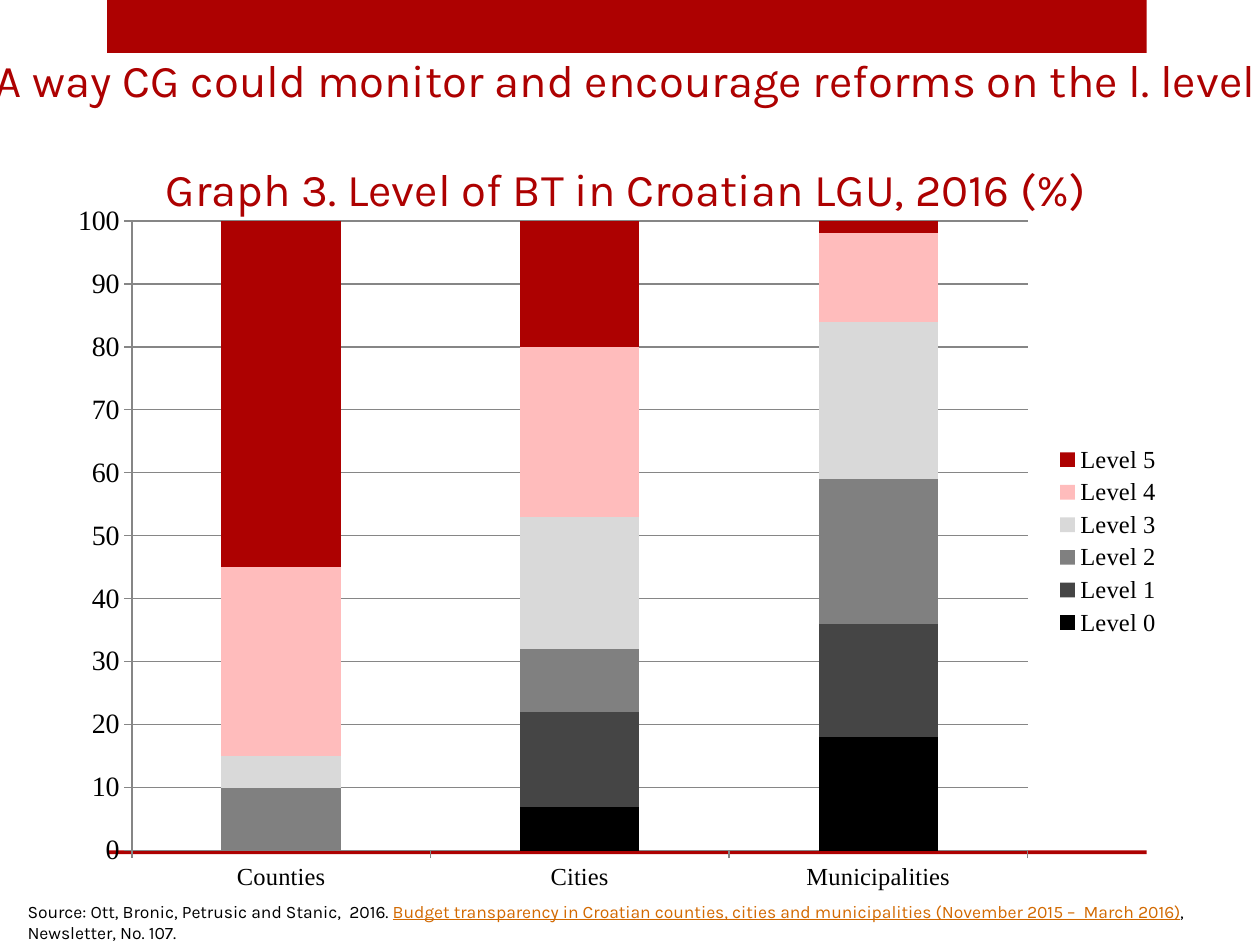
from lxml import etree
from pptx import Presentation
from pptx.chart.data import CategoryChartData
from pptx.dml.color import RGBColor
from pptx.enum.chart import XL_CHART_TYPE, XL_LEGEND_POSITION, XL_TICK_MARK
from pptx.enum.shapes import MSO_SHAPE
from pptx.enum.text import MSO_ANCHOR, MSO_AUTO_SIZE, PP_ALIGN
from pptx.oxml.ns import qn
from pptx.util import Inches, Pt

STACKED = XL_CHART_TYPE.COLUMN_STACKED
RIGHT = XL_LEGEND_POSITION.RIGHT
OUTSIDE = XL_TICK_MARK.OUTSIDE
NO_TICK = XL_TICK_MARK.NONE
RECT = MSO_SHAPE.RECTANGLE
BOTTOM = MSO_ANCHOR.BOTTOM
NO_FIT = MSO_AUTO_SIZE.NONE
CENTER = PP_ALIGN.CENTER

COLORS = {"red": "AD0101", "pink": "FFBCBC", "light": "D9D9D9", "gray": "808080",
          "dark": "454545", "black": "000000", "link": "D26900", "grid": "868686"}
LEVELS = [("Level 0", (0, 7, 18), "black"), ("Level 1", (0, 15, 18), "dark"),
          ("Level 2", (10, 10, 23), "gray"), ("Level 3", (5, 21, 25), "light"),
          ("Level 4", (30, 27, 14), "pink"), ("Level 5", (55, 20, 2), "red")]
SOURCE = [("Source: Ott, Bronic, Petrusic and Stanic,  2016. ", "black"),
          ("Budget transparency in Croatian counties, cities and municipalities "
           "(November 2015 –  March 2016)", "link"),
          (", Newsletter, No. 107.", "black")]


def rgb(name):
    return RGBColor.from_string(COLORS[name])


def style(font, name, size, color):
    font.name = name
    font.size = Pt(size)
    font.color.rgb = rgb(color)


prs = Presentation()
prs.slide_width, prs.slide_height = Inches(10), Inches(7.5)
s = prs.slides.add_slide(prs.slide_layouts[5])

for top, height in ((0, 0.42), (6.75, 0.03)):
    bar = s.shapes.add_shape(RECT, Inches(0.85), Inches(top), Inches(8.25), Inches(height))
    bar.fill.solid()
    bar.fill.fore_color.rgb = rgb("red")
    bar.line.fill.background()
    bar.shadow.inherit = False

title = s.shapes.title
title.left, title.top = Inches(-0.28), Inches(0.35)
title.width, title.height = Inches(10.51), Inches(1.41)
tf = title.text_frame
tf.text = ("A way CG could monitor and encourage reforms on the l. level\v\v"
           "Graph 3. Level of BT in Croatian LGU, 2016 (%)")
tf.auto_size = NO_FIT
tf.vertical_anchor = BOTTOM
p = tf.paragraphs[0]
p.alignment = CENTER
style(p.font, "Karla", 26, "red")
for r in p.runs:
    style(r.font, "Karla", 26, "red")
for br in p._p.findall(qn("a:br")):
    etree.SubElement(br, qn("a:rPr"), sz="2600")

data = CategoryChartData()
data.categories = ["Counties", "Cities", "Municipalities"]
for name, values, color in LEVELS:
    data.add_series(name, values)
chart = s.shapes.add_chart(STACKED, Inches(0.5), Inches(1.49), Inches(8.82), Inches(5.61),
                           data).chart
style(chart.font, "Times New Roman", 10, "black")
chart.has_title = False
chart.has_legend = True
chart.legend.position = RIGHT
chart.legend.include_in_layout = False
style(chart.legend.font, "Times New Roman", 14, "black")

plot = chart.plots[0]
plot.gap_width = 150
plot.overlap = 100
plot.vary_by_categories = False
for series, (name, values, color) in zip(plot.series, LEVELS):
    series.format.fill.solid()
    series.format.fill.fore_color.rgb = rgb(color)

val_axis = chart.value_axis
val_axis.minimum_scale, val_axis.maximum_scale, val_axis.major_unit = 0, 100, 10
val_axis.has_major_gridlines = True
for axis, size in ((chart.category_axis, 14), (val_axis, 16)):
    axis.major_tick_mark = OUTSIDE
    axis.minor_tick_mark = NO_TICK
    style(axis.tick_labels.font, "Times New Roman", size, "black")
for line in (chart.category_axis.format.line, val_axis.format.line,
             val_axis.major_gridlines.format.line):
    line.color.rgb = rgb("grid")
    line.width = Pt(0.75)

plot_area = chart._chartSpace.chart.plotArea
for old in plot_area.findall(qn("c:layout")):
    plot_area.remove(old)
layout = etree.Element(qn("c:layout"))
plot_area.insert(0, layout)
manual = etree.SubElement(layout, qn("c:manualLayout"))
for tag, val in (("layoutTarget", "inner"), ("xMode", "edge"), ("yMode", "edge"),
                 ("x", "0.062"), ("y", "0.047"), ("w", "0.806"), ("h", "0.891")):
    etree.SubElement(manual, qn(f"c:{tag}"), val=val)

source = s.shapes.add_textbox(Inches(0.12), Inches(7.1), Inches(9.88), Inches(0.44))
tf = source.text_frame
tf.word_wrap = True
p = tf.paragraphs[0]
for text, color in SOURCE:
    r = p.add_run()
    r.text = text
    style(r.font, "Karla", 10, color)
    r.font.underline = color == "link"

prs.save("out.pptx")
